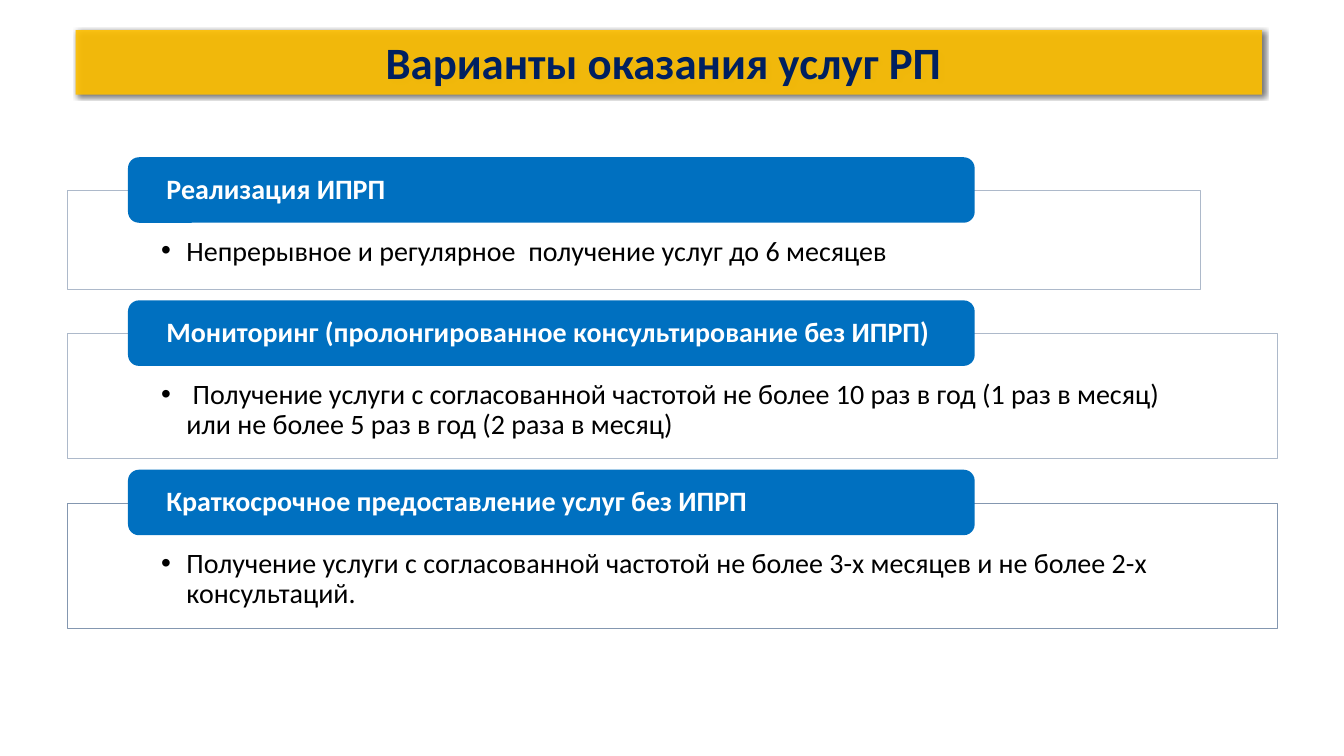
from dataclasses import dataclass

from lxml import etree
from pptx import Presentation
from pptx.dml.color import RGBColor
from pptx.enum import shapes, text
from pptx.oxml import ns
from pptx.shapes.autoshape import Shape
from pptx.slide import Slide
from pptx.util import Pt

RECT = shapes.MSO_SHAPE.RECTANGLE
ROUNDED = shapes.MSO_SHAPE.ROUNDED_RECTANGLE


@dataclass(frozen=True)
class Theme:
    font: str = "Calibri"
    title_size: float = 32
    text_size: float = 20
    gold: str = "FFC000"
    navy: str = "002060"
    blue: str = "0070C0"
    white: str = "FFFFFF"
    black: str = "000000"
    pale_line: str = "ADB9CA"
    dark_line: str = "8497B0"


@dataclass(frozen=True)
class Option:
    heading: str
    detail: str
    width: float
    height: float
    line: str


T = Theme()
LEFT, FIRST_TOP, GAP = 48.24, 136.08, 31.68
HEADING_LEFT, HEADING_RISE = 91.44, 23.76
HEADING_WIDTH, HEADING_HEIGHT = 604.8, 46.8
OPTIONS = [
    Option("Реализация ИПРП",
           "Непрерывное и регулярное  получение услуг до 6 месяцев",
           809.28, 70.56, T.pale_line),
    Option("Мониторинг (пролонгированное консультирование без ИПРП)",
           " Получение услуги с согласованной частотой не более 10 раз в год "
           "(1 раз в месяц) или не более 5 раз в год (2 раза в месяц)",
           864, 89.28, T.pale_line),
    Option("Краткосрочное предоставление услуг без ИПРП",
           "Получение услуги с согласованной частотой не более 3-х месяцев "
           "и не более 2-х консультаций.",
           864, 89.28, T.dark_line),
]


def add_child(parent: etree._Element, tag: str, **attrs: str) -> etree._Element:
    return etree.SubElement(parent, ns.qn(tag), attrs)


def add_box(s: Slide, kind: shapes.MSO_SHAPE, left: float, top: float,
            width: float, height: float, fill: str, *,
            line: str | None = None, opacity: int = 100) -> Shape:
    sp = s.shapes.add_shape(kind, Pt(left), Pt(top), Pt(width), Pt(height))
    sp.shadow.inherit = False
    sp.fill.solid()
    sp.fill.fore_color.rgb = RGBColor.from_string(fill)
    if opacity < 100:
        color = sp.fill._xPr.find(".//" + ns.qn("a:srgbClr"))
        add_child(color, "a:alpha", val=str(opacity * 1000))
    if line:
        sp.line.color.rgb = RGBColor.from_string(line)
        sp.line.width = Pt(0.5)
    else:
        sp.line.fill.background()
    return sp


def add_shadow(sp: Shape) -> None:
    effects = sp._element.spPr.find(ns.qn("a:effectLst"))
    shadow = add_child(effects, "a:outerShdw", blurRad=str(Pt(3)), dist=str(Pt(2)),
                       dir="2700000", algn="tl", rotWithShape="0")
    color = add_child(shadow, "a:srgbClr", val=T.black)
    add_child(color, "a:alpha", val="60000")


def write(sp: Shape, content: str, *, color: str, size: float = T.text_size,
          bold: bool = False, bullet: bool = False, spacing: float = 0.9,
          align: text.PP_ALIGN = text.PP_ALIGN.LEFT,
          anchor: text.MSO_ANCHOR = text.MSO_ANCHOR.TOP,
          insets: tuple[float, float, float, float] = (7.2, 3.6, 7.2, 3.6)) -> None:
    """Fill a shape with one paragraph; insets are left, top, right, bottom."""
    tf = sp.text_frame
    tf.word_wrap = True
    tf.vertical_anchor = anchor
    tf.margin_left, tf.margin_top, tf.margin_right, tf.margin_bottom = map(Pt, insets)
    p = tf.paragraphs[0]
    p.alignment = align
    p.line_spacing = spacing
    if bullet:
        p.level = 1
        pPr = p._p.get_or_add_pPr()
        pPr.set("marL", str(Pt(18)))
        pPr.set("indent", str(-Pt(18)))
        add_child(pPr, "a:buFont", typeface="Arial")
        add_child(pPr, "a:buChar", char="•")
    r = p.add_run()
    r.text = content
    r.font.name = T.font
    r.font.size = Pt(size)
    r.font.bold = bold
    r.font.color.rgb = RGBColor.from_string(color)


def draw_option(s: Slide, option: Option, top: float) -> None:
    body = add_box(s, RECT, LEFT, top, option.width, option.height, T.white,
                   line=option.line, opacity=90)
    write(body, option.detail, color=T.black, bullet=True,
          insets=(66.96, 33.12, 66.96, 11.52))
    heading = add_box(s, ROUNDED, HEADING_LEFT, top - HEADING_RISE,
                      HEADING_WIDTH, HEADING_HEIGHT, T.blue)
    write(heading, option.heading, color=T.white, bold=True,
          anchor=text.MSO_ANCHOR.MIDDLE, insets=(25.2, 0, 25.2, 0))


def main() -> None:
    prs = Presentation()
    prs.slide_width, prs.slide_height = Pt(960), Pt(540)
    s = prs.slides.add_slide(prs.slide_layouts[6])

    top = FIRST_TOP
    for option in OPTIONS:
        draw_option(s, option, top)
        top += option.height + GAP

    title = add_box(s, RECT, 54, 21.6, 847.44, 46.08, T.gold, opacity=90)
    add_shadow(title)
    write(title, "Варианты оказания услуг РП ", color=T.navy, size=T.title_size,
          bold=True, spacing=1.0, align=text.PP_ALIGN.CENTER)

    prs.save("out.pptx")


if __name__ == "__main__":
    main()
